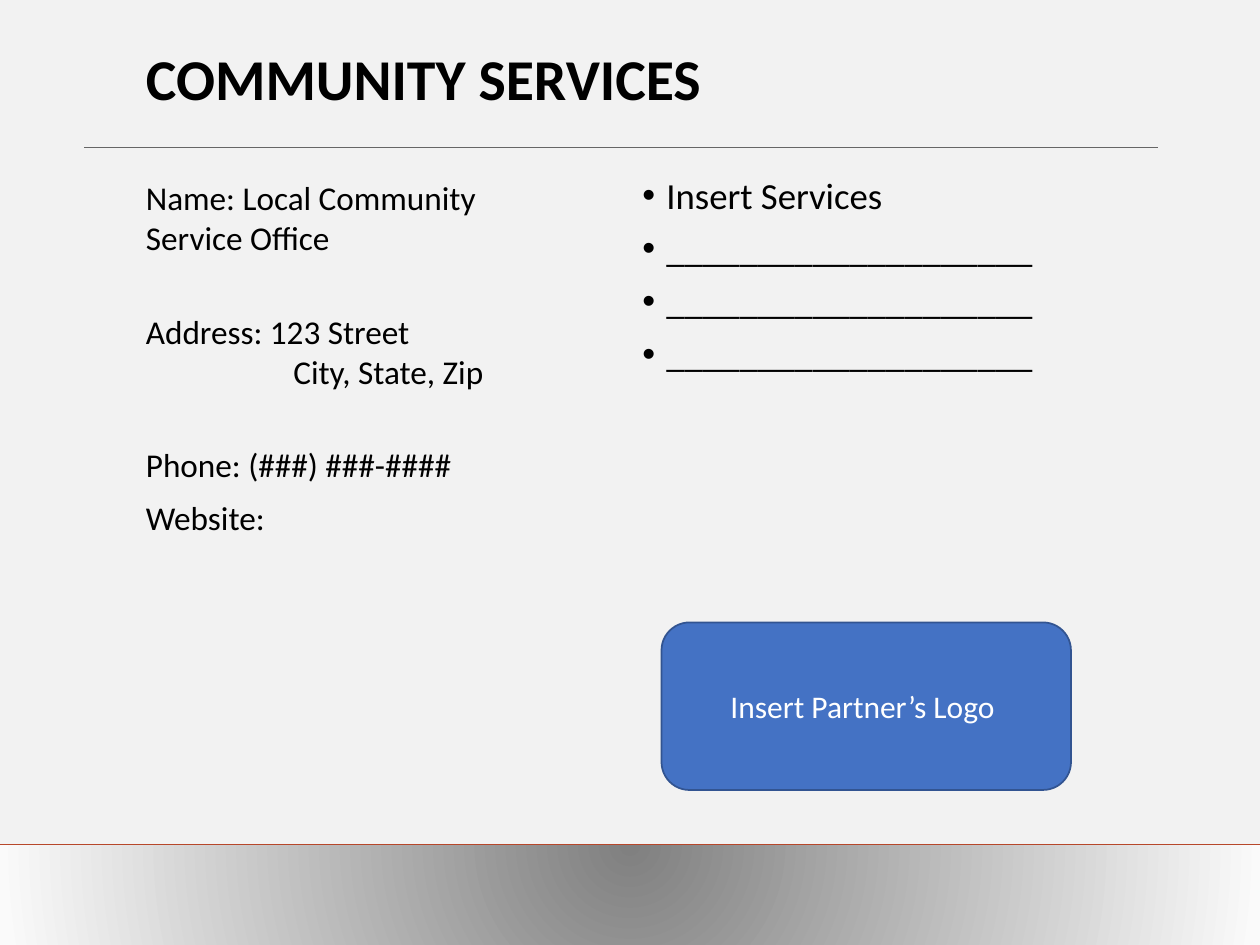
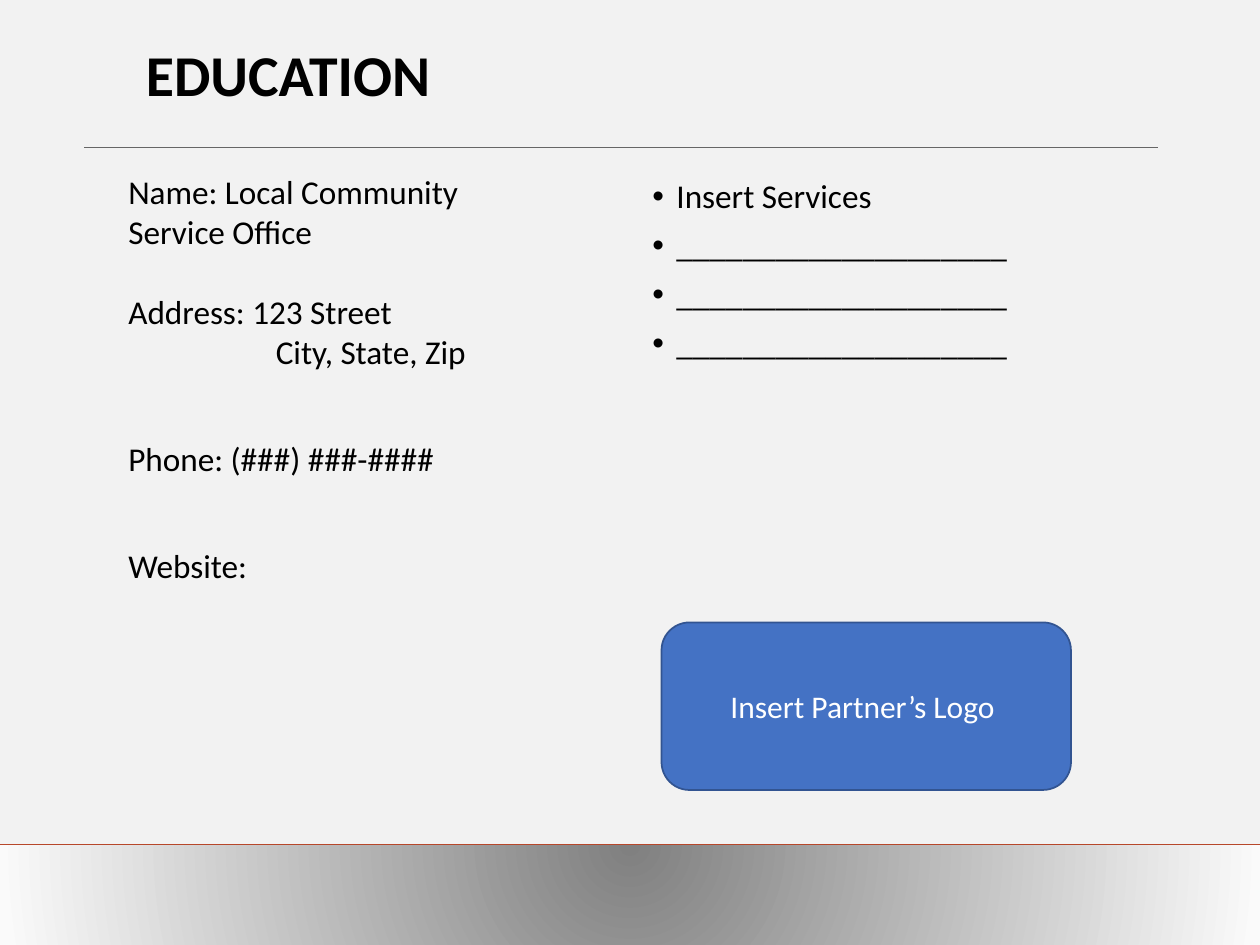
from dataclasses import dataclass

from lxml import etree
from pptx import Presentation
from pptx import util as u
from pptx.dml.color import RGBColor
from pptx.enum import shapes, text
from pptx.oxml import parse_xml
from pptx.oxml.ns import nsdecls, qn


@dataclass(frozen=True)
class Theme:
    font: str = "Calibri"
    paper: str = "F2F2F2"
    ink: str = "000000"
    accent: str = "B7472A"
    rule: str = "666666"
    band_center: str = "808080"
    band_edge: str = "FAFAFA"
    logo_fill: str = "4472C4"
    logo_line: str = "325491"
    logo_ink: str = "FFFFFF"
    title_size: float = 33
    body_size: float = 19
    logo_size: float = 18
    gap: float = 7.5
    line_height: float = 23.2
    address_indent: float = 1.17
    bullet_indent: float = 0.19


THEME = Theme()
WIDTH, HEIGHT = 10, 7.5
TEXT_WIDTH, TEXT_HEIGHT = 3.98, 3.42
BLANK_LINE = "_" * 20
SERVICES = ["Insert Services"] + [BLANK_LINE] * 3
CONTACT = [
    "Name: Local Community\vService Office",
    "Address: 123 Street",
    "City, State, Zip",
    "Phone: (###) ###-####",
    "Website:",
]


def color(value):
    return RGBColor.from_string(value)


def inches(*lengths):
    return [u.Inches(length) for length in lengths]


def style_runs(para, size, ink=THEME.ink, bold=False):
    for span in para.runs:
        span.font.name = THEME.font
        span.font.size = u.Pt(size)
        span.font.bold = bold
        span.font.color.rgb = color(ink)


def add_text(page, area, lines, size, bold=False):
    frame = page.shapes.add_textbox(*inches(*area)).text_frame
    frame.word_wrap = True
    frame.text = "\n".join(lines)
    for para in frame.paragraphs:
        style_runs(para, size, bold=bold)
    return frame


def add_title(page, title, top):
    frame = add_text(page, (1.06, top, 7.18, 1.14), [title], THEME.title_size, True)
    frame.vertical_anchor = text.MSO_ANCHOR.MIDDLE
    frame.paragraphs[0].line_spacing = 0.9


def add_contact(page, left, top, gaps):
    frame = add_text(page, (left, top, TEXT_WIDTH, TEXT_HEIGHT), CONTACT, THEME.body_size)
    for para, gap in zip(frame.paragraphs, gaps):
        para.space_before = u.Pt(gap)
    indent = str(u.Inches(THEME.address_indent))
    frame.paragraphs[2]._p.get_or_add_pPr().set("marL", indent)


def add_services(page, left, top, size):
    frame = add_text(page, (left, top, TEXT_WIDTH, TEXT_HEIGHT), SERVICES, size)
    indent = u.Inches(THEME.bullet_indent)
    for para in frame.paragraphs:
        para.line_spacing = 0.9
        para.space_before = u.Pt(THEME.gap)
        properties = para._p.get_or_add_pPr()
        properties.set("marL", str(indent))
        properties.set("indent", str(-indent))
        etree.SubElement(properties, qn("a:buFont")).set("typeface", "Arial")
        etree.SubElement(properties, qn("a:buChar")).set("char", "•")


def add_rule(page, start, end, y, ink):
    rule = page.shapes.add_connector(
        shapes.MSO_CONNECTOR.STRAIGHT, *inches(start, y, end, y))
    rule.line.color.rgb = color(ink)
    rule.line.width = u.Pt(0.5)
    etree.SubElement(rule._element.spPr, qn("a:effectLst"))


def add_band(page):
    top = 6.71
    band = page.shapes.add_shape(
        shapes.MSO_SHAPE.RECTANGLE, *inches(0, top, WIDTH, HEIGHT - top))
    band.shadow.inherit = False
    band.line.fill.background()
    gradient = parse_xml(
        f'<a:gradFill {nsdecls("a")} rotWithShape="1"><a:gsLst>'
        f'<a:gs pos="0"><a:srgbClr val="{THEME.band_center}"/></a:gs>'
        f'<a:gs pos="100000"><a:srgbClr val="{THEME.band_edge}"/></a:gs>'
        '</a:gsLst><a:path path="circle">'
        '<a:fillToRect l="43000" t="0" r="43000" b="100000"/>'
        '</a:path></a:gradFill>')
    band._element.spPr.find(qn("a:prstGeom")).addnext(gradient)


def add_logo_slot(page):
    slot = page.shapes.add_shape(
        shapes.MSO_SHAPE.ROUNDED_RECTANGLE, *inches(5.25, 4.94, 3.25, 1.33))
    slot.shadow.inherit = False
    slot.fill.solid()
    slot.fill.fore_color.rgb = color(THEME.logo_fill)
    slot.line.color.rgb = color(THEME.logo_line)
    slot.line.width = u.Pt(1)
    frame = slot.text_frame
    frame.text = "Insert Partner’s Logo "
    frame.vertical_anchor = text.MSO_ANCHOR.MIDDLE
    para = frame.paragraphs[0]
    para.alignment = text.PP_ALIGN.CENTER
    style_runs(para, THEME.logo_size, THEME.logo_ink)


def add_page(deck, title, title_top):
    page = deck.slides.add_slide(deck.slide_layouts[6])
    add_rule(page, 0, WIDTH, 6.7, THEME.accent)
    add_title(page, title, title_top)
    add_band(page)
    add_rule(page, 0.67, 9.19, 1.17, THEME.rule)
    add_logo_slot(page)
    return page


def main():
    deck = Presentation()
    deck.slide_width, deck.slide_height = inches(WIDTH, HEIGHT)
    backdrop = deck.slide_master.background.fill
    backdrop.solid()
    backdrop.fore_color.rgb = color(THEME.paper)

    gap, line = THEME.gap, THEME.line_height

    community = add_page(deck, "COMMUNITY SERVICES", 0.08)
    add_contact(community, 1.06, 1.36, [gap, line + gap, 0, line + gap, gap])
    add_services(community, 5, 1.36, 21)

    education = add_page(deck, "EDUCATION", 0.05)
    add_contact(education, 0.92, 1.31, [gap, line, 0, line + 2 * gap, line + 2 * gap])
    add_services(education, 5.08, 1.38, THEME.body_size)

    deck.save("out.pptx")


if __name__ == "__main__":
    main()
